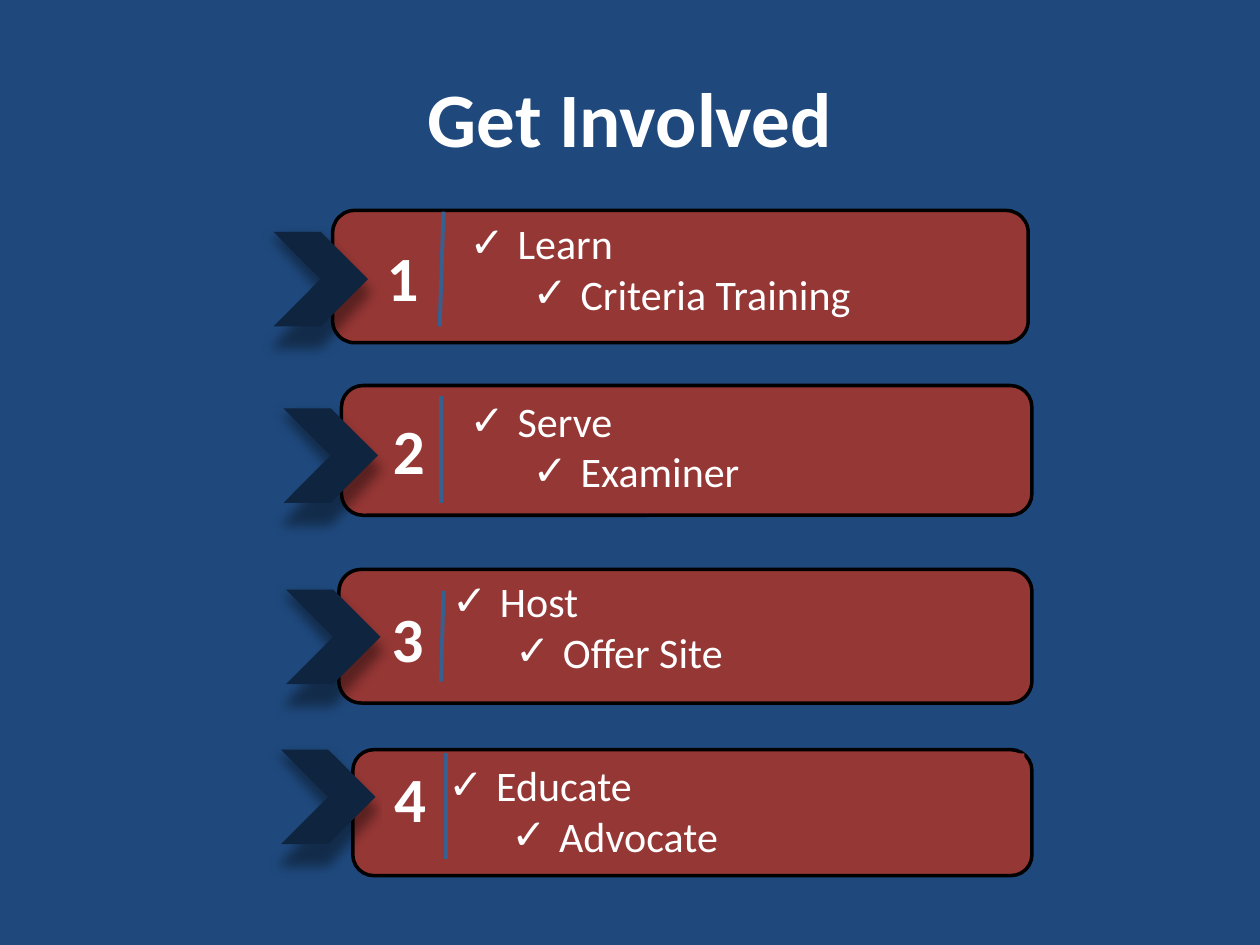
"""Build the Get Involved slide: four numbered panels with check lists."""
from dataclasses import dataclass

from lxml import etree
from pptx import Presentation
from pptx.dml.color import RGBColor
from pptx.enum.shapes import MSO_CONNECTOR, MSO_SHAPE
from pptx.enum.text import MSO_ANCHOR, MSO_AUTO_SIZE, PP_ALIGN
from pptx.oxml.ns import qn
from pptx.util import Inches, Pt

ROUNDED = MSO_SHAPE.ROUNDED_RECTANGLE
CHEVRON = MSO_SHAPE.CHEVRON
STRAIGHT = MSO_CONNECTOR.STRAIGHT
MIDDLE = MSO_ANCHOR.MIDDLE
TOP = MSO_ANCHOR.TOP
CENTER = PP_ALIGN.CENTER
LEFT = PP_ALIGN.LEFT
GROW = MSO_AUTO_SIZE.SHAPE_TO_FIT_TEXT
NO_FIT = MSO_AUTO_SIZE.NONE
TITLE_ONLY = 5
COLUMNS, ROWS = 100, 75


@dataclass(frozen=True)
class Theme:
    """Colours, font and sizes of the slide."""

    background: str = "1F497D"
    panel: str = "953735"
    border: str = "000000"
    divider: str = "376092"
    arrow: str = "0F243E"
    text: str = "FFFFFF"
    font: str = "Calibri"
    title_size: int = 44
    number_size: int = 36
    list_size: int = 24
    border_width: float = 2
    divider_width: float = 2.25


class SlideBuilder:
    """Draw themed elements on a slide divided into a grid."""

    def __init__(self, presentation, theme):
        self.theme = theme
        self.cell_width = presentation.slide_width / COLUMNS
        self.cell_height = presentation.slide_height / ROWS
        self.slide = presentation.slides.add_slide(presentation.slide_layouts[TITLE_ONLY])
        self.paint(self.slide.background.fill, theme.background)

    def place(self, left, top, width, height):
        """Turn grid cells into slide lengths."""
        return (round(left * self.cell_width), round(top * self.cell_height),
                round(width * self.cell_width), round(height * self.cell_height))

    def paint(self, fill, color):
        """Give a fill one solid colour."""
        fill.solid()
        fill.fore_color.rgb = RGBColor.from_string(color)

    def apply(self, target, formats):
        """Set every attribute named in a dict."""
        for name, value in formats.items():
            setattr(target, name, value)

    def add_text(self, paragraph, text, size, bold=False):
        """Add one formatted run."""
        run = paragraph.add_run()
        run.text = text
        self.apply(run.font, {"name": self.theme.font, "size": Pt(size), "bold": bold})
        run.font.color.rgb = RGBColor.from_string(self.theme.text)

    def title(self, text, area):
        """Move and format the title placeholder."""
        shape = self.slide.shapes.title
        shape.left, shape.top, shape.width, shape.height = self.place(*area)
        self.apply(shape.text_frame, {"vertical_anchor": MIDDLE, "auto_size": NO_FIT})
        paragraph = shape.text_frame.paragraphs[0]
        paragraph.alignment = CENTER
        self.add_text(paragraph, text, self.theme.title_size, True)

    def panel(self, area):
        """Draw an outlined rounded panel."""
        shape = self.slide.shapes.add_shape(ROUNDED, *self.place(*area))
        shape.shadow.inherit = False
        self.paint(shape.fill, self.theme.panel)
        self.paint(shape.line.fill, self.theme.border)
        shape.line.width = Pt(self.theme.border_width)

    def arrow(self, area):
        """Draw a chevron with a soft shadow below it."""
        shape = self.slide.shapes.add_shape(CHEVRON, *self.place(*area))
        self.paint(shape.fill, self.theme.arrow)
        shape.line.fill.background()
        effects = etree.SubElement(shape._element.spPr, qn("a:effectLst"))
        shadow = etree.SubElement(
            effects, qn("a:outerShdw"), blurRad=str(Pt(7)), dist=str(Pt(3)),
            dir="5400000", sx="106000", sy="118000", algn="t", rotWithShape="0")
        color = etree.SubElement(shadow, qn("a:srgbClr"), val=self.theme.border)
        etree.SubElement(color, qn("a:alpha"), val="40000")

    def text_box(self, area, wrap, filled):
        """Add a growing text box and return its frame."""
        shape = self.slide.shapes.add_textbox(*self.place(*area))
        if filled:
            self.paint(shape.fill, self.theme.panel)
        self.apply(shape.text_frame,
                   {"word_wrap": wrap, "auto_size": GROW, "vertical_anchor": TOP})
        return shape.text_frame

    def number(self, text, area, filled):
        """Add a large panel number."""
        frame = self.text_box(area, False, filled)
        self.add_text(frame.paragraphs[0], text, self.theme.number_size, True)

    def checklist(self, items, area, filled):
        """Add one check-marked line per level."""
        frame = self.text_box(area, True, filled)
        for level, text in enumerate(items):
            paragraph = frame.add_paragraph() if level else frame.paragraphs[0]
            self.apply(paragraph, {"level": level, "alignment": LEFT})
            properties = paragraph._p.get_or_add_pPr()
            properties.set("marL", str(Inches(0.38 + 0.5 * level)))
            properties.set("indent", str(Inches(-0.38)))
            etree.SubElement(properties, qn("a:buFont"), typeface=self.theme.font)
            etree.SubElement(properties, qn("a:buChar"), char="✓")
            self.add_text(paragraph, text, self.theme.list_size)

    def divider(self, start, end):
        """Draw a line between two grid points."""
        line = self.slide.shapes.add_connector(STRAIGHT, *self.place(*start, *end))
        self.paint(line.line.fill, self.theme.divider)
        line.line.width = Pt(self.theme.divider_width)
        etree.SubElement(line._element.spPr, qn("a:effectLst"))


STEPS = [
    {"items": ("Learn", "Criteria Training"), "panel": (26.4, 16.7, 55.2, 10.5),
     "arrow": (21.7, 18.4), "number": (29.7, 18.4), "list": (36.3, 16.8, 45),
     "divider": ((35.2, 16.8), (34.9, 25.9))},
    {"items": ("Serve", "Examiner"), "panel": (27.1, 30.6, 54.8, 10.3),
     "arrow": (22.5, 32.4), "number": (30.2, 32.2), "list": (36.3, 30.9, 45),
     "divider": ((35, 31.4), (35, 39.9))},
    {"items": ("Host", "Offer Site"), "panel": (26.9, 45.2, 55, 10.6),
     "arrow": (22.7, 46.8), "number": (30.1, 47.1), "list": (34.9, 45.2, 46.4),
     "divider": ((35.2, 46.9), (35, 54.1))},
    {"items": ("Educate", "Advocate"), "panel": (28, 59.5, 53.9, 10),
     "arrow": (22.3, 59.5), "number": (30.3, 59.8), "list": (34.6, 59.8, 46.7),
     "divider": ((35.4, 59.8), (35.4, 68.2)), "filled": True},
]


def main():
    """Build and save the presentation."""
    presentation = Presentation()
    presentation.slide_width, presentation.slide_height = Inches(10), Inches(7.5)
    builder = SlideBuilder(presentation, Theme())
    builder.title("Get Involved", (5, 3, 90, 12.5))
    for position, step in enumerate(STEPS, 1):
        filled = step.get("filled", False)
        builder.panel(step["panel"])
        builder.checklist(step["items"], (*step["list"], 9.1), filled)
        builder.arrow((*step["arrow"], 7.5, 7.5))
        builder.number(str(position), (*step["number"], 4.6, 7.1), filled)
        builder.divider(*step["divider"])
    presentation.save("out.pptx")


if __name__ == "__main__":
    main()
